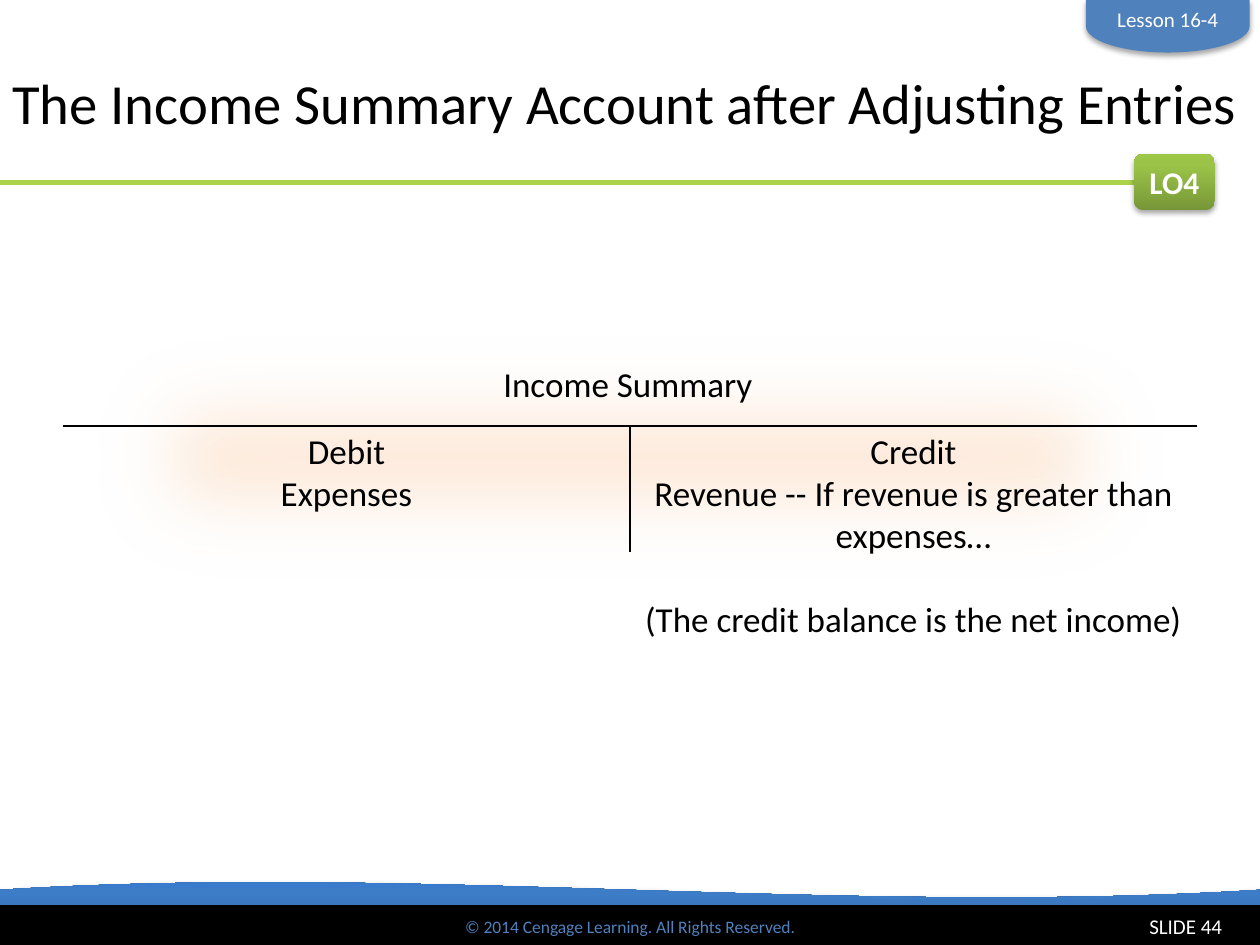
from dataclasses import dataclass

import pptx
import pptx.util
import pptx.oxml
import pptx.oxml.ns
from pptx.dml.color import RGBColor
from pptx.enum.shapes import MSO_CONNECTOR, MSO_SHAPE
from pptx.enum.text import MSO_ANCHOR, PP_ALIGN
from pptx.util import Cm


@dataclass(frozen=True)
class Theme:
    font: str = "Calibri"
    black: str = "000000"
    white: str = "FFFFFF"
    blue: str = "4F81BD"
    lime: str = "AAD24B"
    peach: str = "FDEADA"
    blue_stops: tuple = ((0, "2F5F99"), (80, "3D7CC7"), (100, "3A7CCB"))
    green_stops: tuple = ((0, "779737"), (80, "9BC348"), (100, "9DC746"))
    title: float = 32.4
    body: int = 20
    badge: int = 18
    label: int = 12
    credit: int = 10


THEME = Theme()


def drawing_xml(body):
    return pptx.oxml.parse_xml(body.replace(">", f" {pptx.oxml.ns.nsdecls('a')}>", 1))


def add_effect(shape, effect=""):
    properties = shape._element.spPr
    for old in properties.findall(pptx.oxml.ns.qn("a:effectLst")):
        properties.remove(old)
    properties.append(drawing_xml(f"<a:effectLst>{effect}</a:effectLst>"))


def add_drop_shadow(shape):
    add_effect(shape, '<a:outerShdw blurRad="40000" dist="23000" dir="5400000" rotWithShape="0">'
                      '<a:srgbClr val="000000"><a:alpha val="35000"/></a:srgbClr></a:outerShdw>')


def add_gradient(shape, stops):
    """Fill from bottom to top with (percent, colour) stops."""
    stop_xml = "".join(f'<a:gs pos="{percent * 1000}"><a:srgbClr val="{color}"/></a:gs>'
                       for percent, color in stops)
    shape._element.spPr.find(pptx.oxml.ns.qn("a:prstGeom")).addnext(drawing_xml(
        f'<a:gradFill rotWithShape="1"><a:gsLst>{stop_xml}</a:gsLst>'
        '<a:lin ang="16200000" scaled="0"/></a:gradFill>'))


def add_block(shapes, kind, box, fill=None):
    shape = shapes.add_shape(kind, *(Cm(length) for length in box))
    shape.shadow.inherit = False
    shape.line.fill.background()
    if fill:
        shape.fill.solid()
        shape.fill.fore_color.rgb = RGBColor.from_string(fill)
    return shape


def add_line(shapes, start, end, color, width):
    line = shapes.add_connector(MSO_CONNECTOR.STRAIGHT,
                                *(Cm(length) for length in (*start, *end)))
    line.line.color.rgb = RGBColor.from_string(color)
    line.line.width = pptx.util.Pt(width)
    add_effect(line)


def write_text(shape, *lines, size=THEME.body, color=THEME.black, bold=False,
               align=PP_ALIGN.CENTER, anchor=MSO_ANCHOR.TOP, wrap=True):
    frame = shape.text_frame
    frame.word_wrap = wrap
    frame.vertical_anchor = anchor
    for index, line in enumerate(lines):
        paragraph = frame.add_paragraph() if index else frame.paragraphs[0]
        paragraph.text = line
        paragraph.alignment = align
        paragraph.font.name = THEME.font
        paragraph.font.size = pptx.util.Pt(size)
        paragraph.font.bold = bold
        paragraph.font.color.rgb = RGBColor.from_string(color)
    return frame


def add_text(shapes, box, *lines, **text_format):
    text_box = shapes.add_textbox(*(Cm(length) for length in box))
    return write_text(text_box, *lines, **text_format)


def add_footer(slide, box):
    left, top, width, height = box
    bar_height = 0.76
    bar_top = top + height - bar_height
    wave = add_block(slide.shapes, MSO_SHAPE.WAVE, box)
    add_gradient(wave, THEME.blue_stops)
    add_drop_shadow(wave)

    bar = add_block(slide.shapes, MSO_SHAPE.RECTANGLE,
                    (left, bar_top, width, bar_height), THEME.black)
    bar.line.color.rgb = RGBColor.from_string(THEME.black)
    bar.line.width = pptx.util.Pt(2)
    write_text(bar, "© 2014 Cengage Learning. All Rights Reserved.",
               size=THEME.credit, color=THEME.blue, anchor=MSO_ANCHOR.MIDDLE)

    number = add_block(slide.shapes, MSO_SHAPE.RECTANGLE,
                       (left + width - 5.59, bar_top, 5.08, bar_height), THEME.black)
    write_text(number, "SLIDE 44", size=THEME.label, color=THEME.white,
               align=PP_ALIGN.RIGHT, anchor=MSO_ANCHOR.MIDDLE)


def add_header(slide, box):
    left, top, width, height = box
    add_text(slide.shapes, (left, top - 0.3, width + 0.2, 3.17),
             "The Income Summary Account after Adjusting Entries",
             size=THEME.title, align=PP_ALIGN.LEFT, anchor=MSO_ANCHOR.BOTTOM)

    # Rule with the learning objective badge on its right end
    rule_y = top + height
    add_line(slide.shapes, (left, rule_y), (left + width - 1.27, rule_y), THEME.lime, 3)
    badge = add_block(slide.shapes, MSO_SHAPE.ROUNDED_RECTANGLE,
                      (left + width - 2.54, rule_y - 0.58, 1.63, 1.14))
    add_gradient(badge, THEME.green_stops)
    add_drop_shadow(badge)
    write_text(badge, "LO4", size=THEME.badge, color=THEME.white, bold=True, wrap=False)


def add_lesson_tag(slide, box):
    left, top, width, height = box
    shapes = slide.shapes.add_group_shape().shapes
    # The tab is turned a quarter, so its unturned frame swaps width and height
    tab = add_block(shapes, MSO_SHAPE.FLOWCHART_DELAY,
                    (left + (width - height) / 2, top + (height - width) / 2, height, width),
                    THEME.blue)
    tab.rotation = 90
    add_drop_shadow(tab)
    add_text(shapes, (left + 0.36, top, width - 0.72, 0.76), "Lesson 16-4",
             size=THEME.label, color=THEME.white, wrap=False)


def add_t_account(slide, box):
    left, top, width, height = box
    middle = left + width / 2
    bar_y = top + 2.44
    entries_top = bar_y - 0.05
    panel = add_block(slide.shapes, MSO_SHAPE.RECTANGLE, box, THEME.peach)
    add_effect(panel, '<a:softEdge rad="635000"/>')

    # Entries on both sides
    credit = add_text(slide.shapes, (middle, entries_top, width / 2, 4.52), "Credit",
                      "Revenue -- If revenue is greater than expenses…",
                      "(The credit balance is the net income)")
    credit.paragraphs[-1].space_before = pptx.util.Pt(24)
    add_text(slide.shapes, (left, entries_top, width / 2, 1.96), "Debit", "Expenses")

    # Account name and the T
    shapes = slide.shapes.add_group_shape().shapes
    add_text(shapes, (left + 2.26, top + 1.04, 18.26, 1.12), "Income Summary")
    add_line(shapes, (left + width, bar_y), (left, bar_y), THEME.black, 1.5)
    add_line(shapes, (middle, bar_y), (middle, bar_y + 2.54), THEME.black, 1.5)


def main():
    presentation = pptx.Presentation()
    presentation.slide_width = Cm(25.4)
    presentation.slide_height = Cm(19.05)
    slide = presentation.slides.add_slide(presentation.slide_layouts[6])
    add_footer(slide, (0, 17.78, 25.4, 1.27))
    add_t_account(slide, (1.27, 6.15, 22.86, 6.15))
    add_header(slide, (0, 0, 25.4, 3.68))
    add_lesson_tag(slide, (21.89, 0, 3.3, 1.06))
    presentation.save("out.pptx")


if __name__ == "__main__":
    main()
